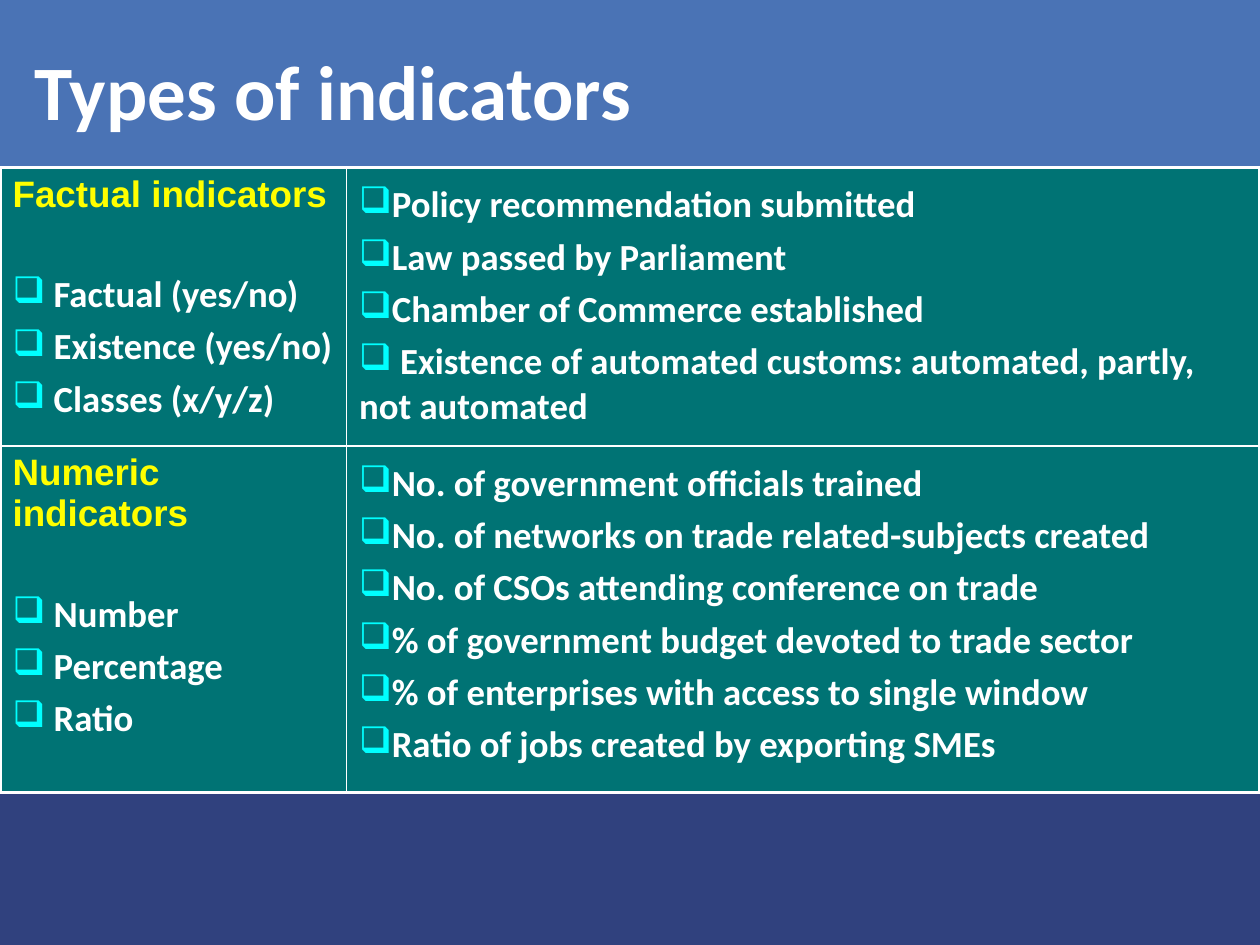
from lxml import etree
from pptx import Presentation
from pptx import util as u
from pptx.dml.color import RGBColor
from pptx.enum import shapes, text
from pptx.oxml.ns import qn

TITLE = "Types of indicators"
ROWS = [
    {"head": "Factual indicators",
     "kinds": [" Factual (yes/no)", " Existence (yes/no)", " Classes (x/y/z)"],
     "cases": ["Policy recommendation submitted",
               "Law passed by Parliament",
               "Chamber of Commerce established",
               " Existence of automated customs: automated, partly, not automated"]},
    {"head": "Numeric indicators",
     "kinds": [" Number", " Percentage", " Ratio"],
     "cases": ["No. of government officials trained",
               "No. of networks on trade related-subjects created",
               "No. of CSOs attending conference on trade",
               "% of government budget devoted to trade sector",
               "% of enterprises with access to single window",
               "Ratio of jobs created by exporting SMEs"]},
]
WIDTHS = [2.75, 7.25]
HEIGHTS = [2.21, 2.75]
BAND = 1.33
WHITE, NAVY, BLUE, TEAL = "FFFFFF", "30417E", "4A73B5", "007374"
YELLOW, CYAN = "FFFF00", "00FFFF"


def paint(fill, hue):
    """Fill with one solid colour."""
    fill.solid()
    fill.fore_color.rgb = RGBColor.from_string(hue)


def solid(node, tag, hue):
    """Add a colour element under an XML node."""
    part = etree.SubElement(node, qn(tag))
    etree.SubElement(part, qn("a:srgbClr"), val=hue)


def write(frame, words, size=21, face="Calibri", hue=WHITE, gap=0, mark=None):
    """Write one paragraph into a text frame."""
    para = frame.paragraphs[0]
    if para.runs:
        para = frame.add_paragraph()
    if mark:
        props = para._p.get_or_add_pPr()
        props.set("marL", "0")
        props.set("indent", "0")
        solid(props, "a:buClr", CYAN)
        etree.SubElement(props, qn("a:buChar"), char=mark)
    para.alignment = text.PP_ALIGN.LEFT
    para.space_before = u.Pt(gap)
    run = para.add_run()
    run.text = words
    run.font.size, run.font.name, run.font.bold = u.Pt(size), face, True
    run.font.color.rgb = RGBColor.from_string(hue)


def bullets(frame, items, first):
    """Write a list whose first item has its own space before."""
    for i, item in enumerate(items):
        write(frame, item, gap=4.2 if i else first, mark="❑")


def edge(cell, row, col):
    """Draw thick outer and thin inner borders."""
    thick = {"L": col == 0, "R": col == 1, "T": row == 0, "B": row == 1}
    props = cell._tc.get_or_add_tcPr()
    for i, (side, outer) in enumerate(thick.items()):
        line = etree.Element(qn("a:ln" + side), w=str(u.Pt(2.25 if outer else 1)))
        solid(line, "a:solidFill", WHITE)
        props.insert(i, line)


def main():
    """Build the slide."""
    deck = Presentation()
    deck.slide_width, deck.slide_height = u.Inches(10), u.Inches(7.5)
    slide = deck.slides.add_slide(deck.slide_layouts[5])
    paint(slide.background.fill, NAVY)

    band = slide.shapes.add_shape(shapes.MSO_SHAPE.RECTANGLE, 0, 0,
                                  deck.slide_width, u.Inches(BAND))
    band.shadow.inherit = False
    paint(band.fill, BLUE)
    band.line.fill.background()
    slide.shapes._spTree.insert(2, band._element)

    title = slide.shapes.title
    title.left, title.top = u.Inches(0.17), u.Inches(0.25)
    title.width, title.height = u.Inches(8.5), u.Inches(0.92)
    title.text_frame.vertical_anchor = text.MSO_ANCHOR.MIDDLE
    write(title.text_frame, TITLE, size=44)

    grid = slide.shapes.add_table(2, 2, 0, u.Inches(BAND), deck.slide_width,
                                  u.Inches(sum(HEIGHTS))).table
    for col, width in zip(grid.columns, WIDTHS):
        col.width = u.Inches(width)
    for r, (row, high) in enumerate(zip(ROWS, HEIGHTS)):
        grid.rows[r].height = u.Inches(high)
        left, right = grid.cell(r, 0), grid.cell(r, 1)
        for c, cell in enumerate((left, right)):
            paint(cell.fill, TEAL)
            edge(cell, r, c)
            cell.vertical_anchor = text.MSO_ANCHOR.TOP
            cell.margin_left = cell.margin_right = u.Inches(0.1)
            cell.margin_top = u.Inches((0.05, 0.12)[c])
            cell.margin_bottom = u.Inches(0.05)
        write(left.text_frame, row["head"], face="Arial", hue=YELLOW)
        bullets(left.text_frame, row["kinds"], 33)
        bullets(right.text_frame, row["cases"], 0)
    deck.save("out.pptx")


if __name__ == "__main__":
    main()
